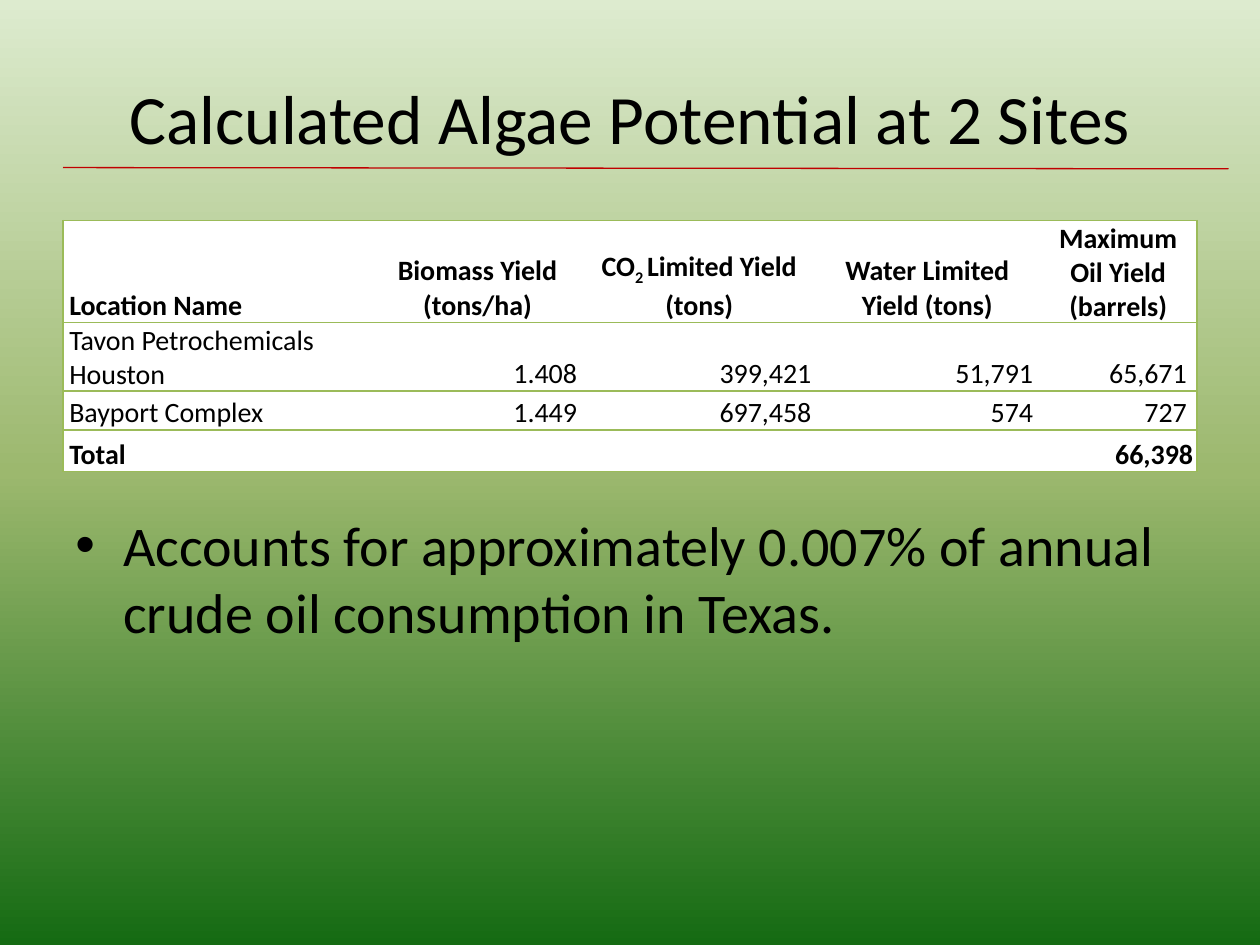
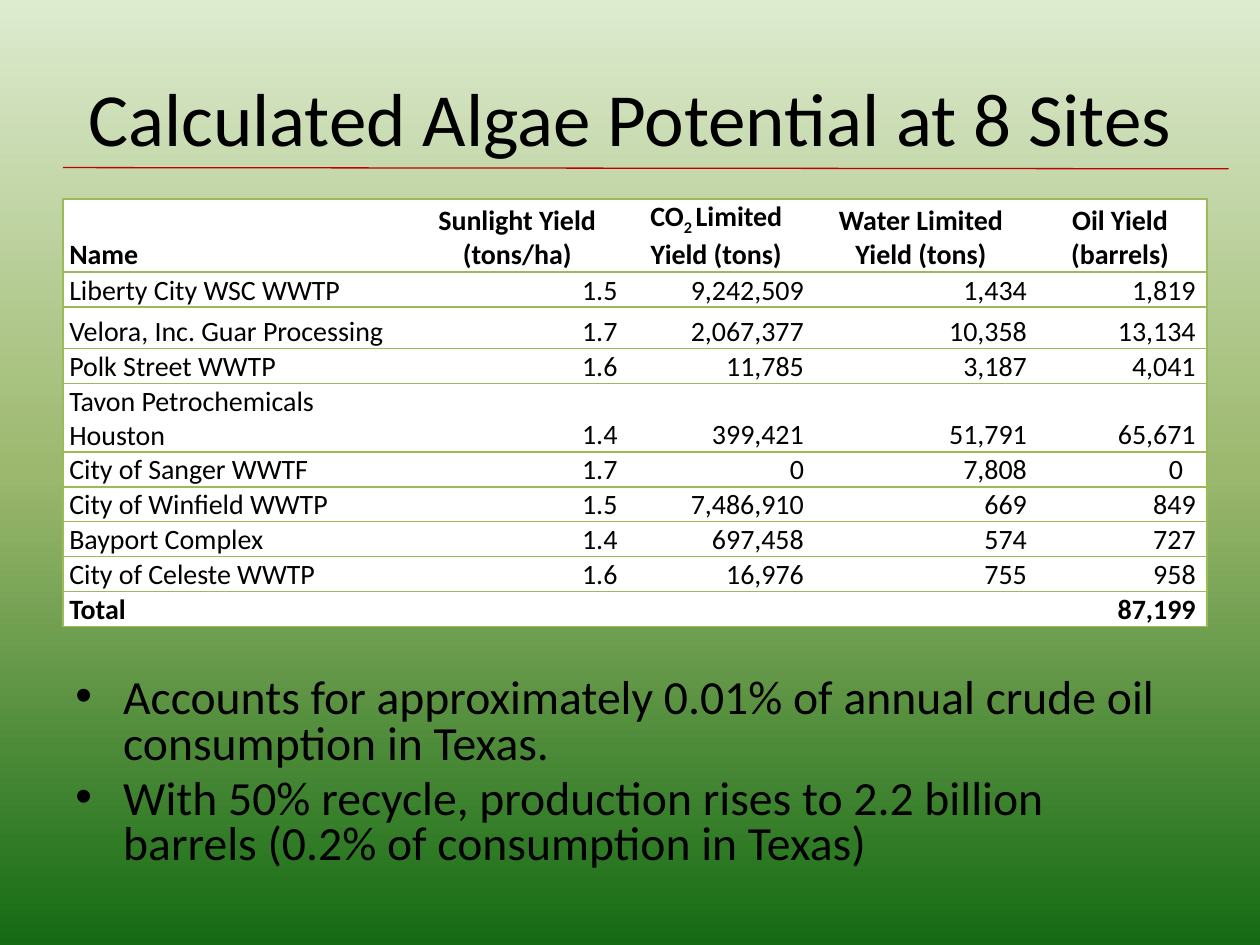
from dataclasses import dataclass, field

from lxml import etree
from pptx import Presentation
from pptx.dml.color import RGBColor
from pptx.enum.shapes import MSO_CONNECTOR
from pptx.enum.text import MSO_ANCHOR, PP_ALIGN
from pptx.oxml.ns import qn
from pptx.util import Inches, Pt

LEFT, CENTER, RIGHT = PP_ALIGN.LEFT, PP_ALIGN.CENTER, PP_ALIGN.RIGHT
MIDDLE, BOTTOM, TOP = MSO_ANCHOR.MIDDLE, MSO_ANCHOR.BOTTOM, MSO_ANCHOR.TOP
STRAIGHT = MSO_CONNECTOR.STRAIGHT


@dataclass(frozen=True)
class Theme:
    font: str = "Calibri"
    text: str = "000000"
    rule: str = "C00000"
    cell: str = "FFFFFF"
    border: str = "9BBB59"
    background: tuple = ((0, "DDEBCF"), (50, "9CB86E"), (100, "156B13"))
    table_size: float = 16
    border_width: float = 1
    rule_width: float = 0.75


THEME = Theme()


@dataclass(frozen=True)
class YieldTable:
    top: float
    columns: list[float]
    heights: list[float]
    rows: list[list[str]]  # text between ~ marks is subscript
    right_margin: float
    last_margins: dict[int, float] = field(default_factory=dict)  # by row
    merge_total: bool = False


@dataclass(frozen=True)
class SiteSlide:
    title: str
    title_size: float
    table: YieldTable
    bullets: list[str]
    bullet_box: tuple[float, float, float, float]
    bullet_size: float
    line_spacing: float | None = None


TWO_SITES = SiteSlide(
    title="Calculated Algae Potential at 2 Sites",
    title_size=39.6,
    table=YieldTable(
        top=1.75,
        columns=[2.45, 1.66, 1.86, 1.76, 1.27],
        heights=[0.75, 0.5, 0.31, 0.33],
        rows=[
            ["Location Name", "Biomass Yield (tons/ha)", "CO~2 ~Limited Yield (tons)",
             "Water Limited Yield (tons)", "Maximum Oil Yield (barrels)"],
            ["Tavon Petrochemicals Houston", "1.408", "399,421", "51,791", "65,671"],
            ["Bayport Complex", "1.449", "697,458", "574", "727"],
            ["Total", "", "", "", "66,398"],
        ],
        right_margin=0.03,
        last_margins={1: 0.08, 2: 0.08},
        merge_total=True,
    ),
    bullets=["Accounts for approximately 0.007% of annual crude oil consumption in Texas."],
    bullet_box=(0.5, 4, 9, 2),
    bullet_size=32,
)

EIGHT_SITES = SiteSlide(
    title="Calculated Algae Potential at 8 Sites",
    title_size=42.9,
    table=YieldTable(
        top=1.58,
        columns=[2.76, 1.68, 1.48, 1.77, 1.39],
        heights=[0.52, 0.27, 0.33, 0.27, 0.52] + [0.27] * 5,
        rows=[
            ["Name", "Sunlight Yield (tons/ha)", "CO~2 ~Limited Yield (tons)",
             "Water Limited Yield (tons)", "Oil Yield (barrels)"],
            ["Liberty City WSC WWTP", "1.5", "9,242,509", "1,434", "1,819"],
            ["Velora, Inc. Guar Processing", "1.7", "2,067,377", "10,358", "13,134"],
            ["Polk Street WWTP", "1.6", "11,785", "3,187", "4,041"],
            ["Tavon Petrochemicals Houston", "1.4", "399,421", "51,791", "65,671"],
            ["City of Sanger WWTF", "1.7", "0", "7,808", "0"],
            ["City of Winfield WWTP", "1.5", "7,486,910", "669", "849"],
            ["Bayport Complex", "1.4", "697,458", "574", "727"],
            ["City of Celeste WWTP", "1.6", "16,976", "755", "958"],
            ["Total", "", "", "", "87,199"],
        ],
        right_margin=0.04,
        last_margins={row: 0.09 for row in range(1, 10)} | {5: 0.19},
    ),
    bullets=[
        "Accounts for approximately 0.01% of annual crude oil consumption in Texas.",
        "With 50% recycle, production rises to 2.2 billion barrels (0.2% of consumption in Texas)",
    ],
    bullet_box=(0.5, 5.33, 9, 1.7),
    bullet_size=27.2,
    line_spacing=0.8,
)


def color(value: str) -> RGBColor:
    return RGBColor.from_string(value)


def add_bullet(paragraph) -> None:
    properties = paragraph._p.get_or_add_pPr()
    properties.set("marL", str(Inches(0.38)))
    properties.set("indent", str(-Inches(0.38)))
    etree.SubElement(properties, qn("a:buFont")).set("typeface", "Arial")
    etree.SubElement(properties, qn("a:buChar")).set("char", "•")


def write_text(text_frame, texts: list[str], *, size: float, bold: bool = False,
               align=LEFT, bullet: bool = False, line_spacing: float | None = None) -> None:
    text_frame.word_wrap = True
    for index, text in enumerate(texts):
        paragraph = text_frame.add_paragraph() if index else text_frame.paragraphs[0]
        if bullet:
            add_bullet(paragraph)
        paragraph.alignment = align
        paragraph.line_spacing = line_spacing
        if index:
            paragraph.space_before = Pt(round(size * 0.2, 1))
        if not text:
            paragraph._p.get_or_add_endParaRPr().set("sz", str(int(size * 100)))
            continue
        for part, content in enumerate(text.split("~")):
            run = paragraph.add_run()
            run.text = content
            run.font.name = THEME.font
            run.font.size = Pt(size)
            run.font.bold = bold
            run.font.color.rgb = color(THEME.text)
            if part % 2:
                run.font._element.set("baseline", "-25000")


def add_text_box(slide, box: tuple[float, float, float, float], texts: list[str],
                 *, anchor=TOP, **text_format) -> None:
    text_frame = slide.shapes.add_textbox(*map(Inches, box)).text_frame
    text_frame.vertical_anchor = anchor
    write_text(text_frame, texts, **text_format)


def set_borders(cell, visible: dict[str, bool]) -> None:
    properties = cell._tc.get_or_add_tcPr()
    for index, (side, shown) in enumerate(visible.items()):
        line = etree.Element(qn(f"a:ln{side}"), w=str(Pt(THEME.border_width)))
        if shown:
            fill = etree.SubElement(line, qn("a:solidFill"))
            etree.SubElement(fill, qn("a:srgbClr")).set("val", THEME.border)
        else:
            etree.SubElement(line, qn("a:noFill"))
        properties.insert(index, line)


def add_yield_table(slide, data: YieldTable) -> None:
    last_row, last_column = len(data.rows) - 1, len(data.columns) - 1
    table = slide.shapes.add_table(
        len(data.rows), len(data.columns), Inches(0.5), Inches(data.top),
        Inches(sum(data.columns)), Inches(sum(data.heights))).table
    table.first_row = table.horz_banding = False
    for column, width in zip(table.columns, data.columns):
        column.width = Inches(width)
    for row, height in zip(table.rows, data.heights):
        row.height = Inches(height)

    for row_index, values in enumerate(data.rows):
        for column_index, value in enumerate(values):
            cell = table.cell(row_index, column_index)
            is_last = column_index == last_column
            right = data.right_margin
            if is_last:
                right = data.last_margins.get(row_index, right)
            cell.margin_left, cell.margin_right = Inches(0.05), Inches(right)
            cell.margin_top, cell.margin_bottom = Inches(0.01), 0
            cell.vertical_anchor = BOTTOM
            cell.fill.solid()
            cell.fill.fore_color.rgb = color(THEME.cell)
            set_borders(cell, {"L": column_index == 0, "R": is_last, "T": True, "B": True})
            if column_index == 0:
                align = LEFT
            else:
                align = RIGHT if row_index else CENTER
            write_text(cell.text_frame, [value], size=THEME.table_size,
                       bold=row_index in (0, last_row), align=align)
    if data.merge_total:
        table.cell(last_row, 0).merge(table.cell(last_row, last_column - 1))


def add_title_rule(slide) -> None:
    rule = slide.shapes.add_connector(
        STRAIGHT, Inches(0.5), Inches(1.33), Inches(9.75), Inches(1.34))
    rule.line.color.rgb = color(THEME.rule)
    rule.line.width = Pt(THEME.rule_width)
    etree.SubElement(rule._element.spPr, qn("a:effectLst"))


def set_background(master) -> None:
    fill = master.background.fill
    fill.gradient()
    fill.gradient_angle = 270
    stops = next(master.element.iter(qn("a:gsLst")))
    for stop in list(stops):
        stops.remove(stop)
    for position, value in THEME.background:
        stop = etree.SubElement(stops, qn("a:gs"), pos=str(position * 1000))
        etree.SubElement(stop, qn("a:srgbClr")).set("val", value)


def add_site_slide(presentation, content: SiteSlide) -> None:
    slide = presentation.slides.add_slide(presentation.slide_layouts[6])
    # Title and rule
    add_text_box(slide, (0.5, 0.3, 9, 1.25), [content.title], anchor=MIDDLE,
                 size=content.title_size, align=CENTER)
    add_title_rule(slide)
    # Yields and conclusions
    add_yield_table(slide, content.table)
    add_text_box(slide, content.bullet_box, content.bullets, size=content.bullet_size,
                 bullet=True, line_spacing=content.line_spacing)


def main() -> None:
    presentation = Presentation()
    presentation.slide_width, presentation.slide_height = Inches(10), Inches(7.5)
    set_background(presentation.slide_master)
    for content in (TWO_SITES, EIGHT_SITES):
        add_site_slide(presentation, content)
    presentation.save("out.pptx")


if __name__ == "__main__":
    main()
